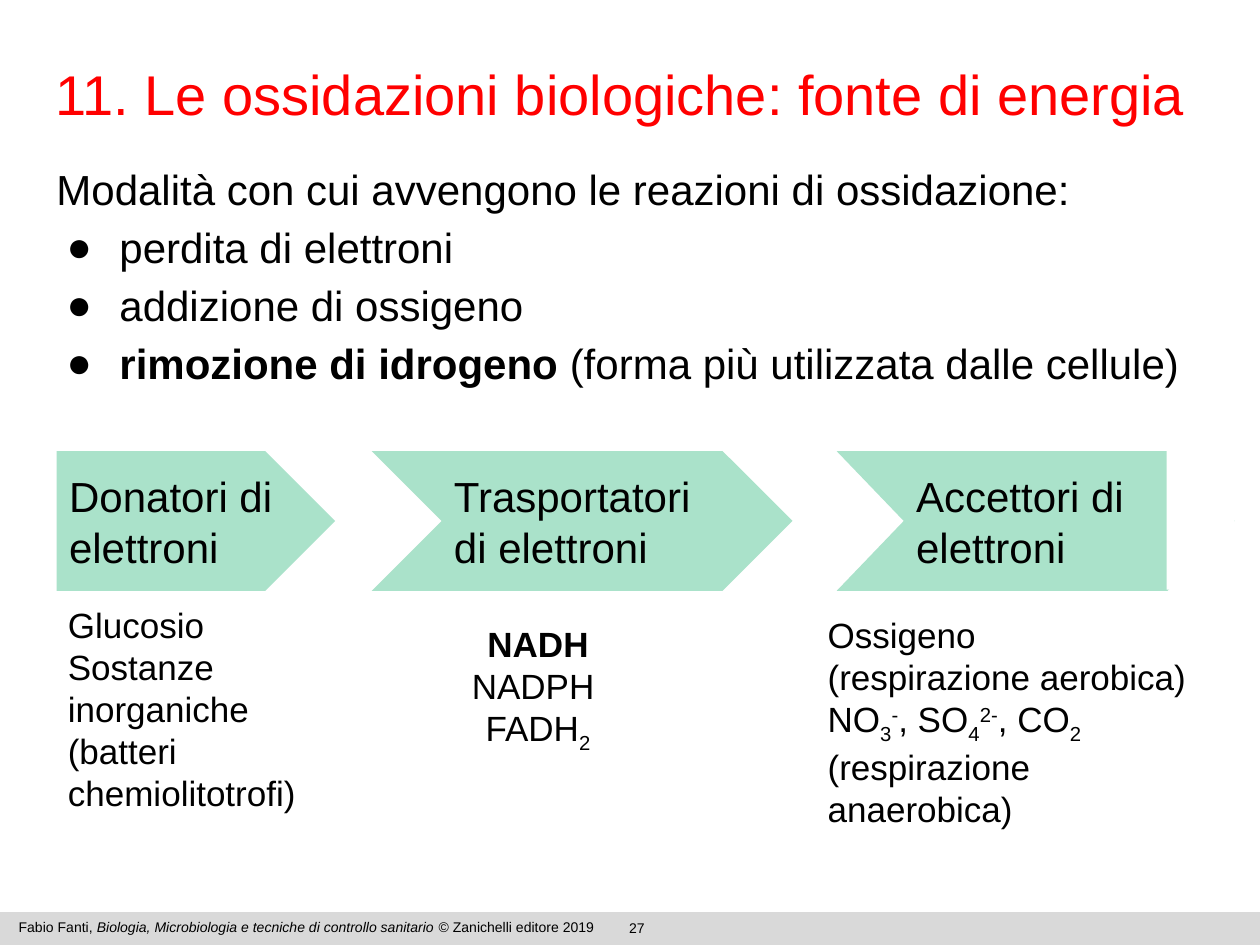
from lxml import etree
from pptx import Presentation
from pptx.dml.color import RGBColor
from pptx.enum.shapes import MSO_SHAPE
from pptx.enum.text import MSO_ANCHOR, PP_ALIGN
from pptx.oxml.ns import qn
from pptx.util import Inches

COLORS = {"band": "D9D9D9", "arrow": "AAE2CA", "title": "FF0000",
          "text": "000000", "paper": "FFFFFF"}
COLS, ROWS = 100, 75
CELL = Inches(0.1)
POINT = 12700
SUB, SUP = -25000, 30000


def rgb(name):
    return RGBColor.from_string(COLORS[name])


def place(box):
    """Turn columns and rows of the grid into lengths."""
    return [round(v * CELL) for v in box]


def add_runs(p, runs, size, color="text"):
    """Each run is a text or a pair of text and format values."""
    for run in runs:
        text, fmt = (run, {}) if isinstance(run, str) else run
        r = p.add_run()
        r.text = text
        values = {"name": "Arial", "size": size * POINT, **fmt}
        base = values.pop("base", None)
        for key, value in values.items():
            setattr(r.font, key, value)
        r.font.color.rgb = rgb(color)
        if base:
            r.font._element.set("baseline", str(base))


def fill_frame(sp, paragraphs, size, color="text", inset=(1, 1),
               anchor=MSO_ANCHOR.TOP, align=PP_ALIGN.LEFT):
    tf = sp.text_frame
    dx, dy = place(inset)
    frame = {"word_wrap": True, "vertical_anchor": anchor,
             "margin_left": dx, "margin_right": dx,
             "margin_top": dy, "margin_bottom": dy}
    for key, value in frame.items():
        setattr(tf, key, value)
    for i, runs in enumerate(paragraphs):
        p = tf.paragraphs[0] if i == 0 else tf.add_paragraph()
        p.alignment = align
        add_runs(p, runs, size, color)
    return tf


def add_text(s, box, paragraphs, size, **options):
    sp = s.shapes.add_textbox(*place(box))
    return fill_frame(sp, paragraphs, size, **options)


def add_block(s, kind, box, color):
    sp = s.shapes.add_shape(kind, *place(box))
    sp.shadow.inherit = False
    sp.fill.solid()
    sp.fill.fore_color.rgb = rgb(color)
    sp.line.fill.background()
    return sp


def set_bullet(p, indent, hanging):
    pPr = p._p.get_or_add_pPr()
    pPr.set("marL", str(round(indent * CELL)))
    pPr.set("indent", str(round(-hanging * CELL)))
    color = etree.SubElement(pPr, qn("a:buClr"))
    etree.SubElement(color, qn("a:srgbClr"), val=COLORS["text"])
    etree.SubElement(pPr, qn("a:buFont"), typeface="Arial")
    etree.SubElement(pPr, qn("a:buChar"), char="●")


def add_footer(s, box):
    x, y, w, h = box
    add_block(s, MSO_SHAPE.RECTANGLE, box, "band")
    credit = ["Fabio Fanti, ",
              ("Biologia, Microbiologia e tecniche di controllo sanitario",
               {"italic": True}),
              " © Zanichelli editore 2019"]
    add_text(s, (x + 0.5, y, w * 0.5, h), [credit], 8, inset=(1, 0.5))
    add_text(s, (x + w * 0.394, y + 0.1, w * 0.223, h), [["27"]], 8,
             inset=(1, 0.5), align=PP_ALIGN.CENTER)


def add_title(s, box):
    sp = add_block(s, MSO_SHAPE.RECTANGLE, box, "paper")
    fill_frame(sp, [["11. Le ossidazioni biologiche: fonte di energia"]], 32,
               color="title", inset=(0.9, 0.5))


def add_modes(s, box):
    tf = add_text(s, box, [
        ["Modalità con cui avvengono le reazioni di ossidazione:"],
        ["perdita di elettroni"],
        ["addizione di ossigeno"],
        [("rimozione di idrogeno ", {"bold": True}),
         "(forma più utilizzata dalle cellule)"]], 24)
    for i, p in enumerate(tf.paragraphs):
        p.line_spacing = 1.15
        if i:
            set_bullet(p, 5, 4.2)


def add_chain(s, box):
    """Row of arrows: donors, carriers, acceptors."""
    x, y, w, h = box
    arrows = [
        (MSO_SHAPE.PENTAGON, 0, 22.1, 0.5, "Donatori di elettroni"),
        (MSO_SHAPE.CHEVRON, 25, 33.4, 0.5, "Trasportatori di elettroni"),
        (MSO_SHAPE.CHEVRON, 61.9, 31.6, 0.48, "Accettori di elettroni")]
    for kind, left, width, tip, label in arrows:
        sp = add_block(s, kind, (x + left, y, width, h), "arrow")
        sp.adjustments[0] = tip
        fill_frame(sp, [[label]], 24, anchor=MSO_ANCHOR.MIDDLE)
    # White cover squares off the last arrow
    add_block(s, MSO_SHAPE.RECTANGLE, (x + w - 5.4, y - 0.1, 5.4, h), "paper")


def add_examples(s, box):
    """Examples under each arrow."""
    x, y, w, h = box
    sub, sup = {"base": SUB}, {"base": SUP}
    add_text(s, (x, y, 21.4, h),
             [["Glucosio"], ["Sostanze inorganiche"],
              ["(batteri chemiolitotrofi)"]], 20)
    add_text(s, (x + 25.2, y + 1.5, 26.2, 11.7),
             [[("NADH", {"bold": True})], ["NADPH "], ["FADH", ("2", sub)]],
             20, align=PP_ALIGN.CENTER)
    add_text(s, (x + w - 31.5, y + 0.8, 31.5, 16.8),
             [["Ossigeno"], ["(respirazione aerobica)"],
              ["NO", ("3", sub), ("-", sup), ", SO", ("4", sub), ("2-", sup),
               ", CO", ("2 ", sub), "(respirazione anaerobica)"]], 20)


def main():
    prs = Presentation()
    prs.slide_width, prs.slide_height = COLS * CELL, ROWS * CELL
    s = prs.slides.add_slide(prs.slide_layouts[6])
    add_footer(s, (0, 72.4, COLS, 2.6))
    add_title(s, (3.5, 4.2, 96.5, 9.7))
    add_modes(s, (3.5, 11.4, 94.3, 20.7))
    add_examples(s, (4.4, 46.9, 91.8, 18.3))
    add_chain(s, (4.5, 35.8, 93.5, 11.1))
    prs.save("out.pptx")


if __name__ == "__main__":
    main()
